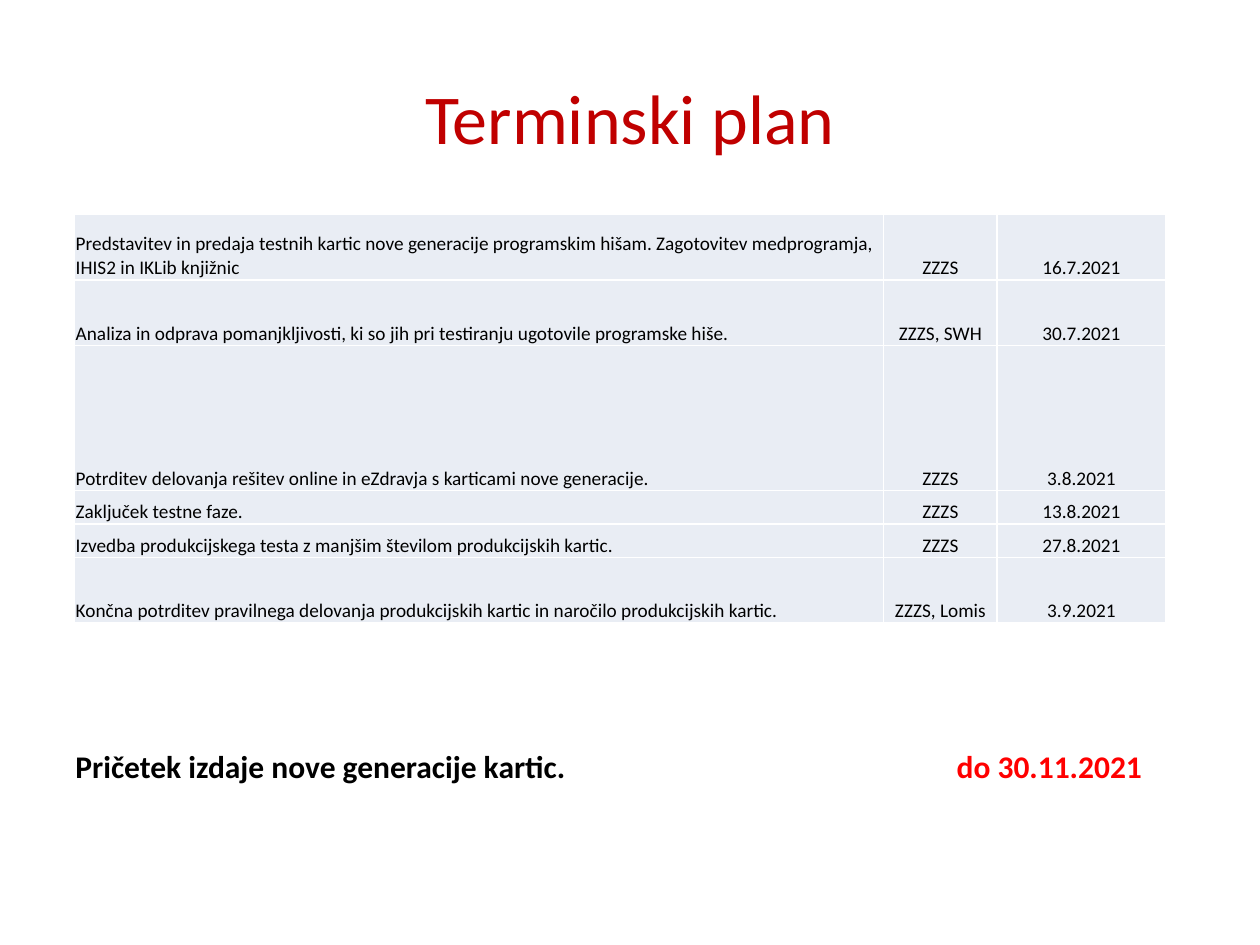
import dataclasses

import lxml.etree
import pptx
import pptx.dml.color
import pptx.enum.text
import pptx.oxml
import pptx.oxml.ns
import pptx.util

Pt = pptx.util.Pt
ALIGN = pptx.enum.text.PP_ALIGN
ANCHOR = pptx.enum.text.MSO_ANCHOR

COLORS = {
    "title": "C00000",
    "text": "000000",
    "deadline": "FF0000",
    "cell": "E9EDF4",
    "border": "FFFFFF",
}
COLUMN_WIDTHS = (462.4, 64.8, 96.4)


@dataclasses.dataclass(frozen=True)
class Milestone:
    task: str
    owner: str
    date: str
    height: float


MILESTONES = (
    Milestone(
        "Predstavitev in predaja testnih kartic nove generacije programskim hišam. "
        "Zagotovitev medprogramja, IHIS2 in IKLib knjižnic",
        "ZZZS", "16.7.2021", 37.4,
    ),
    Milestone(
        "Analiza in odprava pomanjkljivosti, ki so jih pri testiranju ugotovile programske hiše.",
        "ZZZS, SWH", "30.7.2021", 37.4,
    ),
    Milestone(
        "Potrditev delovanja rešitev online in eZdravja s karticami nove generacije.",
        "ZZZS", "3.8.2021", 82.8,
    ),
    Milestone("Zaključek testne faze.", "ZZZS", "13.8.2021", 19.2),
    Milestone(
        "Izvedba produkcijskega testa z manjšim številom produkcijskih kartic.",
        "ZZZS", "27.8.2021", 19.2,
    ),
    Milestone(
        "Končna potrditev pravilnega delovanja produkcijskih kartic in naročilo produkcijskih kartic.",
        "ZZZS, Lomis", "3.9.2021", 37.4,
    ),
)


def add_text(paragraph, text: str, *, size: float, color: str = "text",
             bold: bool = False, align=ALIGN.LEFT) -> None:
    paragraph.alignment = align
    run = paragraph.add_run()
    run.text = text
    run.font.name = "Calibri"
    run.font.size = Pt(size)
    run.font.bold = bold
    run.font.color.rgb = pptx.dml.color.RGBColor.from_string(COLORS[color])


def add_borders(cell) -> None:
    properties = cell._tc.get_or_add_tcPr()
    for index, side in enumerate(("lnL", "lnR", "lnT", "lnB")):
        line = pptx.oxml.parse_xml(
            f'<a:{side} xmlns:a="http://schemas.openxmlformats.org/drawingml/2006/main" '
            f'w="{Pt(1)}"><a:solidFill><a:srgbClr val="{COLORS["border"]}"/>'
            f'</a:solidFill></a:{side}>'
        )
        properties.insert(index, line)


def add_tab_stop(paragraph, position: float) -> None:
    properties = paragraph._p.get_or_add_pPr()
    tabs = lxml.etree.SubElement(properties, pptx.oxml.ns.qn("a:tabLst"))
    lxml.etree.SubElement(tabs, pptx.oxml.ns.qn("a:tab"), pos=str(Pt(position)), algn="l")


def add_title(slide) -> None:
    title = slide.shapes.title
    title.left, title.top, title.width, title.height = Pt(36), Pt(21.6), Pt(648), Pt(90)
    title.text_frame.vertical_anchor = ANCHOR.MIDDLE
    add_text(title.text_frame.paragraphs[0], "Terminski plan",
             size=40, color="title", align=ALIGN.CENTER)


def add_schedule(slide) -> None:
    shape = slide.shapes.add_table(
        len(MILESTONES), len(COLUMN_WIDTHS), Pt(42.6), Pt(122.6),
        Pt(sum(COLUMN_WIDTHS)), Pt(sum(milestone.height for milestone in MILESTONES)),
    )
    table = shape.table
    table.first_row = False
    table.horz_banding = False
    for column, width in zip(table.columns, COLUMN_WIDTHS):
        column.width = Pt(width)
    for row, milestone in zip(table.rows, MILESTONES):
        row.height = Pt(milestone.height)
        texts = (milestone.task, milestone.owner, milestone.date)
        for index, (cell, text) in enumerate(zip(row.cells, texts)):
            cell.margin_left = cell.margin_right = cell.margin_top = Pt(0.7)
            cell.margin_bottom = 0
            cell.vertical_anchor = ANCHOR.BOTTOM
            cell.fill.solid()
            cell.fill.fore_color.rgb = pptx.dml.color.RGBColor.from_string(COLORS["cell"])
            add_borders(cell)
            add_text(cell.text_frame.paragraphs[0], text, size=11,
                     align=ALIGN.CENTER if index else ALIGN.LEFT)


def add_deadline(slide) -> None:
    shape = slide.shapes.add_textbox(Pt(36), Pt(423.4), Pt(630), Pt(29))
    shape.text_frame.word_wrap = True
    paragraph = shape.text_frame.paragraphs[0]
    add_tab_stop(paragraph, 503.6)
    add_text(paragraph, "Pričetek izdaje nove generacije kartic.\t", size=18, bold=True)
    add_text(paragraph, "do 30.11.2021", size=18, color="deadline", bold=True)


def main() -> None:
    presentation = pptx.Presentation()
    presentation.slide_width, presentation.slide_height = Pt(720), Pt(540)
    slide = presentation.slides.add_slide(presentation.slide_layouts[5])
    add_title(slide)
    add_schedule(slide)
    add_deadline(slide)
    presentation.save("out.pptx")


if __name__ == "__main__":
    main()
